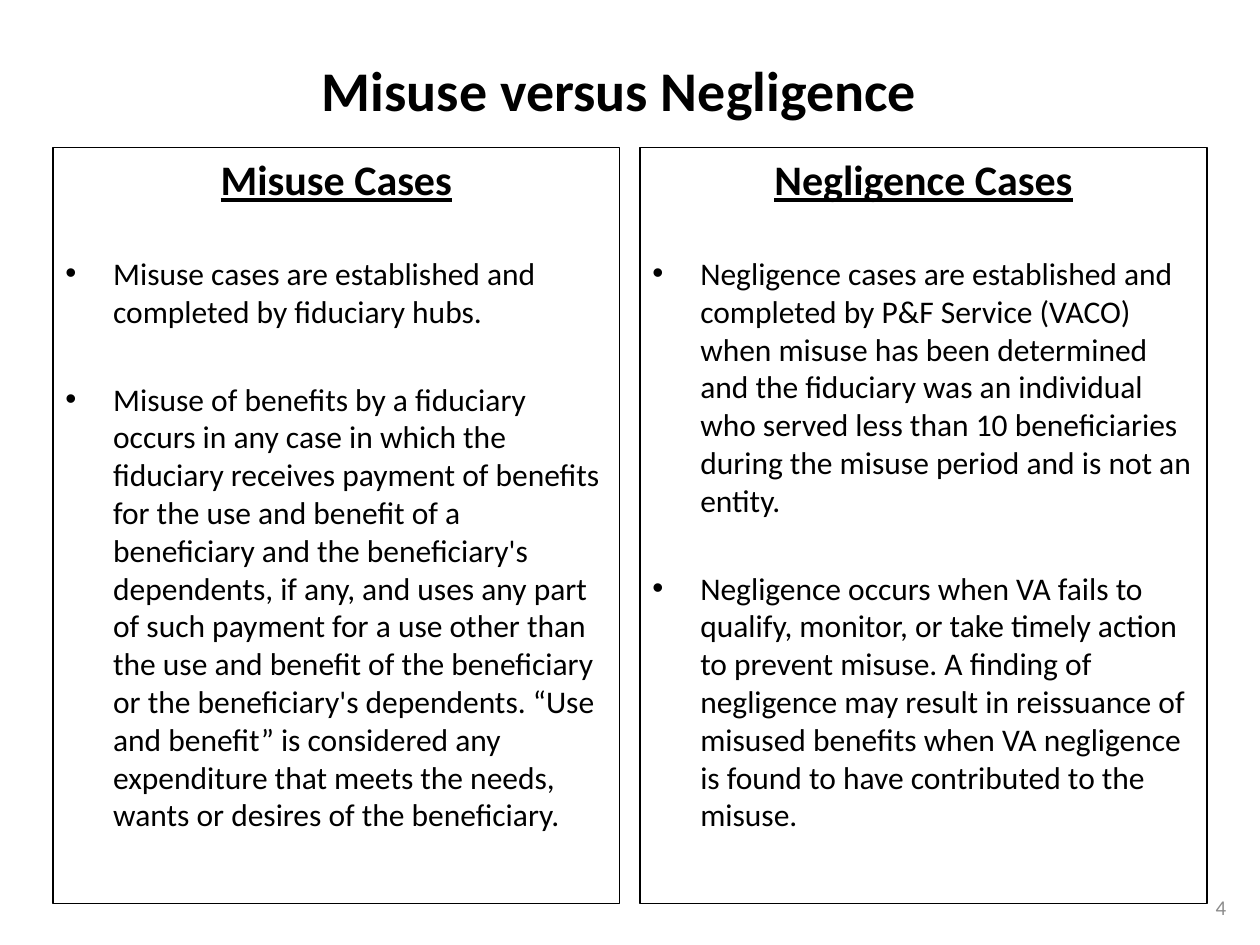
import pptx
import pptx.dml.color
import pptx.enum.shapes
import pptx.enum.text
import pptx.util
from lxml import etree
from pptx.util import Inches

HUES = {"ink": "000000", "gray": "8C8C8C"}
FONT = "Calibri"
ALIGN = pptx.enum.text.PP_ALIGN
MIDDLE = pptx.enum.text.MSO_ANCHOR.MIDDLE
TOP = pptx.enum.text.MSO_ANCHOR.TOP

CASES = [
    ("Misuse Cases", [
        "Misuse cases are established and completed by fiduciary hubs.",
        "Misuse of benefits by a fiduciary occurs in any case in which the "
        "fiduciary receives payment of benefits for the use and benefit of a "
        "beneficiary and the beneficiary's dependents, if any, and uses any "
        "part of such payment for a use other than the use and benefit of the "
        "beneficiary or the beneficiary's dependents. “Use and benefit” is "
        "considered any expenditure that meets the needs, wants or desires of "
        "the beneficiary.",
    ]),
    ("Negligence Cases", [
        "Negligence cases are established and completed by P&F Service (VACO) "
        "when misuse has been determined and the fiduciary was an individual "
        "who served less than 10 beneficiaries during the misuse period and "
        "is not an entity.",
        "Negligence occurs when VA fails to qualify, monitor, or take timely "
        "action to prevent misuse. A finding of negligence may result in "
        "reissuance of misused benefits when VA negligence is found to have "
        "contributed to the misuse.",
    ]),
]


def color(name):
    return pptx.dml.color.RGBColor.from_string(HUES[name])


def write(para, text, size, align, hue="ink", bold=False, line=False):
    para.alignment = align
    run = para.add_run()
    run.text = text
    font = run.font
    font.name, font.size = FONT, pptx.util.Pt(size)
    font.bold, font.underline = bold, line
    font.color.rgb = color(hue)


def bullet(para, indent):
    props = para._p.get_or_add_pPr()
    props.set("marL", str(indent))
    props.set("indent", str(-indent))
    space = pptx.oxml.ns.nsdecls("a").split('"')[1]
    etree.SubElement(props, f"{{{space}}}buFont", typeface="Arial")
    etree.SubElement(props, f"{{{space}}}buChar", char="•")


def add_title(slide, text):
    title = slide.shapes.title
    title.left, title.top = Inches(0), Inches(0.08)
    title.width, title.height = Inches(9.83), Inches(1.25)
    frame = title.text_frame
    frame.vertical_anchor = MIDDLE
    write(frame.paragraphs[0], text, 32, ALIGN.CENTER, bold=True)


def add_panel(slide, left, head, points):
    box = slide.shapes.add_shape(
        pptx.enum.shapes.MSO_SHAPE.RECTANGLE,
        left, Inches(1.17), Inches(4.5), Inches(6))
    box.shadow.inherit = False
    box.fill.background()
    box.line.color.rgb = color("ink")
    box.line.width = pptx.util.Pt(0.75)
    frame = box.text_frame
    frame.word_wrap = True
    frame.vertical_anchor = TOP
    write(frame.paragraphs[0], head, 24, ALIGN.CENTER, bold=True, line=True)
    for point in points:
        para = frame.add_paragraph()
        bullet(para, Inches(0.38))
        para.space_before = pptx.util.Pt(28.6)
        write(para, point, 18, ALIGN.LEFT)


def add_number(slide, text):
    box = slide.shapes.add_textbox(
        Inches(7.5), Inches(7), Inches(2.33), Inches(0.4))
    frame = box.text_frame
    frame.word_wrap = True
    frame.vertical_anchor = MIDDLE
    write(frame.paragraphs[0], text, 12, ALIGN.RIGHT, hue="gray")


def main():
    deck = pptx.Presentation()
    deck.slide_width, deck.slide_height = Inches(10), Inches(7.5)
    slide = deck.slides.add_slide(deck.slide_layouts[5])

    # Heading
    add_title(slide, "Misuse versus Negligence")

    # Two panels side by side
    for col, (head, points) in enumerate(CASES):
        add_panel(slide, Inches(0.42 + col * 4.66), head, points)

    # Page number
    add_number(slide, "4")
    deck.save("out.pptx")


if __name__ == "__main__":
    main()
